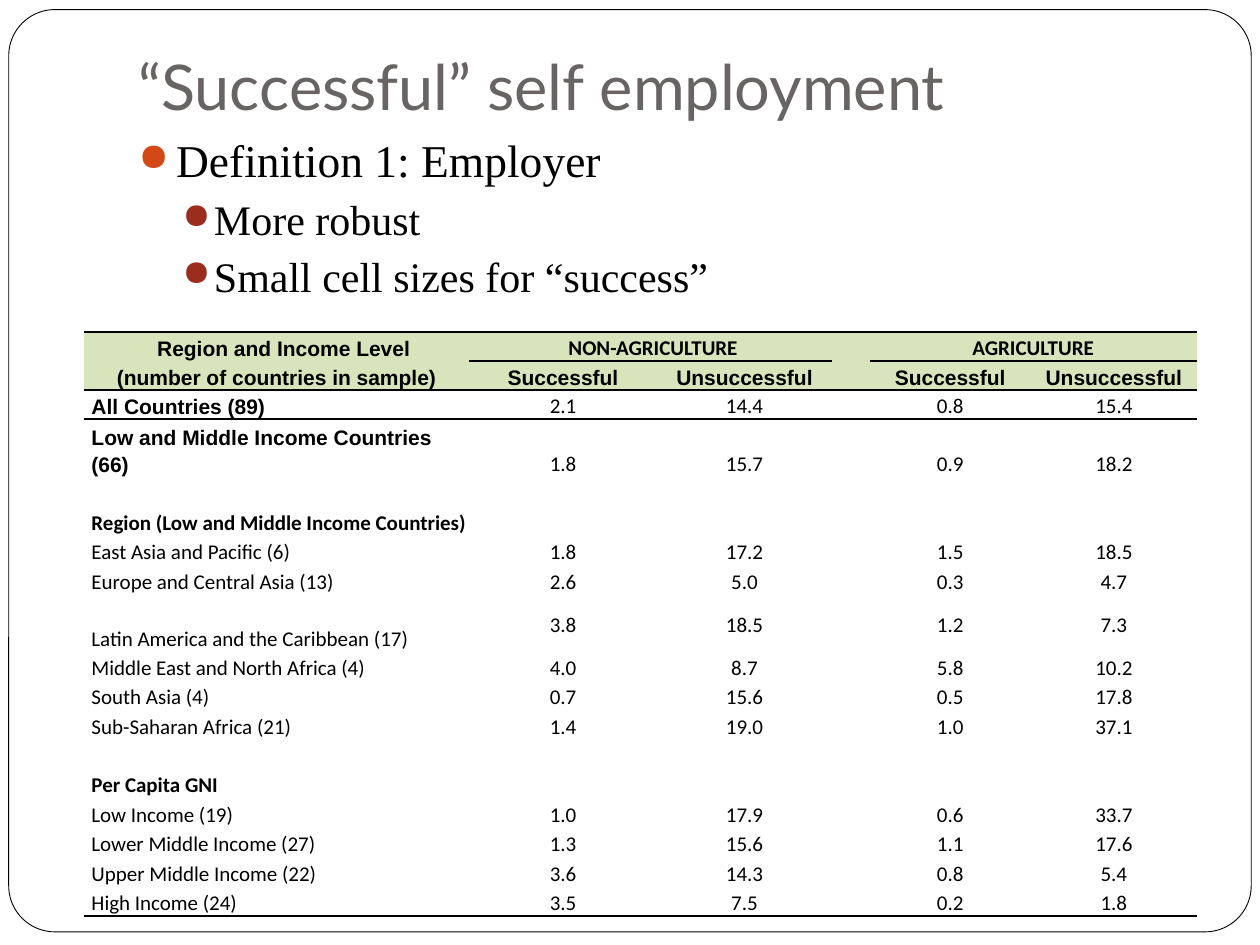
from lxml.etree import SubElement
from pptx import Presentation
from pptx.dml.color import RGBColor
from pptx.enum.shapes import MSO_SHAPE
from pptx.enum.text import MSO_ANCHOR, PP_ALIGN
from pptx.oxml import parse_xml
from pptx.oxml.ns import nsdecls, qn
from pptx.util import Pt

COLORS = {
    "black": "000000",
    "white": "FFFFFF",
    "title": "696464",
    "header": "D7E4BC",
    "orange": "D34817",
    "red": "9B2D1F",
}


def add_run(p, text, font, size, color="black", bold=False):
    r = p.add_run()
    r.text = text
    r.font.name = font
    r.font.size = Pt(size)
    r.font.bold = bold
    r.font.color.rgb = RGBColor.from_string(COLORS[color])


prs = Presentation()
prs.slide_width, prs.slide_height = Pt(720), Pt(540)
s = prs.slides.add_slide(prs.slide_layouts[6])

sp = s.shapes.add_shape(MSO_SHAPE.ROUNDED_RECTANGLE, Pt(5), Pt(5.5), Pt(710), Pt(527))
sp.adjustments[0] = 0.05
sp.shadow.inherit = False
sp.fill.solid()
sp.fill.fore_color.rgb = RGBColor.from_string(COLORS["white"])
sp.line.color.rgb = RGBColor.from_string(COLORS["black"])
sp.line.width = Pt(0.5)

tf = s.shapes.add_textbox(Pt(72), Pt(21.6), Pt(612), Pt(56)).text_frame
tf.word_wrap = True
tf.vertical_anchor = MSO_ANCHOR.BOTTOM
tf.margin_bottom = Pt(7.2)
add_run(tf.paragraphs[0], "“Successful” self employment", "Lato", 36, "title")

bullets = [
    ("Definition 1: Employer", 0, 26, 5.8, 21.6, 21.6, "orange"),
    ("More robust", 1, 24, 3.7, 43.2, 18, "red"),
    ("Small cell sizes for “success”", 1, 24, 3.7, 43.2, 18, "red"),
]
tf = s.shapes.add_textbox(Pt(72), Pt(72), Pt(612), Pt(360)).text_frame
tf.word_wrap = True
for i, (text, level, size, before, left, hang, color) in enumerate(bullets):
    p = tf.add_paragraph() if i else tf.paragraphs[0]
    p.level = level
    p.space_before = Pt(before)
    add_run(p, text, "Times New Roman", size)
    pPr = p._p.get_or_add_pPr()
    pPr.set("marL", str(Pt(left)))
    pPr.set("indent", str(-Pt(hang)))
    clr = SubElement(pPr, qn("a:buClr"))
    SubElement(clr, qn("a:srgbClr"), val=COLORS[color])
    SubElement(pPr, qn("a:buSzPct"), val="85000")
    SubElement(pPr, qn("a:buChar"), char="●")

rows = [
    ["Region and Income Level", " NON-AGRICULTURE", "", "", "AGRICULTURE", ""],
    ["(number of countries in sample)", "Successful", "Unsuccessful", "", "Successful", "Unsuccessful"],
    ["All Countries (89)", "2.1", "14.4", "", "0.8", "15.4"],
    ["Low and Middle Income Countries (66)", "1.8", "15.7", "", "0.9", "18.2"],
    [""] * 6,
    ["Region (Low and Middle Income Countries)"] + [""] * 5,
    ["East Asia and Pacific (6)", "1.8", "17.2", "", "1.5", "18.5"],
    ["Europe and Central Asia (13)", "2.6", "5.0", "", "0.3", "4.7"],
    ["Latin America and the Caribbean (17)", "3.8", "18.5", "", "1.2", "7.3"],
    ["Middle East and North Africa (4)", "4.0", "8.7", "", "5.8", "10.2"],
    ["South Asia (4)", "0.7", "15.6", "", "0.5", "17.8"],
    ["Sub-Saharan Africa (21)", "1.4", "19.0", "", "1.0", "37.1"],
    [""] * 6,
    ["Per Capita GNI"] + [""] * 5,
    ["Low Income (19)", "1.0", "17.9", "", "0.6", "33.7"],
    ["Lower Middle Income (27)", "1.3", "15.6", "", "1.1", "17.6"],
    ["Upper Middle Income (22)", "3.6", "14.3", "", "0.8", "5.4"],
    ["High Income (24)", "3.5", "7.5", "", "0.2", "1.8"],
]
widths = [220.2, 107.2, 100.2, 21.4, 92.2, 94.8]
special_heights = {0: 14.4, 1: 14.4, 3: 31.7, 8: 32.6}
section_rows = (5, 13)
middle_rows = (0, 8, 9)
all_cols, value_cols = range(6), (1, 2, 4, 5)
rules = {
    (0, "T"): all_cols,
    (0, "B"): value_cols,
    (1, "T"): value_cols,
    (1, "B"): all_cols,
    (2, "T"): all_cols,
    (len(rows) - 1, "B"): all_cols,
}

frame = s.shapes.add_table(len(rows), 6, Pt(48), Pt(189.6), Pt(636), Pt(332))
table = frame.table
table.first_row = table.horz_banding = False
table._tbl.tblPr.find(qn("a:tableStyleId")).text = "{2D5ABB26-0587-4C30-8999-92F81FD0307C}"
for col, width in zip(table.columns, widths):
    col.width = Pt(width)

for i, row in enumerate(rows):
    table.rows[i].height = Pt(special_heights.get(i, 16.8))
    for j, text in enumerate(row):
        cell = table.cell(i, j)
        cell.margin_left = cell.margin_right = Pt(4.3)
        cell.margin_top = cell.margin_bottom = 0
        middle = i in middle_rows and j > 0
        cell.vertical_anchor = MSO_ANCHOR.MIDDLE if middle else MSO_ANCHOR.BOTTOM
        if i < 2:
            cell.fill.solid()
            cell.fill.fore_color.rgb = RGBColor.from_string(COLORS["header"])
        else:
            cell.fill.background()
        p = cell.text_frame.paragraphs[0]
        p.line_spacing = 1.15
        p.alignment = PP_ALIGN.CENTER if i < 2 or j else PP_ALIGN.LEFT
        if text:
            arial = i == 1 or (i < 4 and j == 0)
            bold = i < 2 or arial or i in section_rows
            add_run(p, text, "Arial" if arial else "Calibri", 12, bold=bold)
        else:
            SubElement(p._p, qn("a:endParaRPr"), sz="1200")
        tcPr = cell._tc.get_or_add_tcPr()
        for side in "BT":
            if j in rules.get((i, side), ()):
                tcPr.insert(0, parse_xml(
                    f'<a:ln{side} {nsdecls("a")} w="{Pt(1)}"><a:solidFill>'
                    f'<a:srgbClr val="{COLORS["black"]}"/></a:solidFill></a:ln{side}>'))

table.cell(0, 0).margin_left = Pt(12.4)
for i, first in ((0, 1), (0, 4), (5, 0)):
    table.cell(i, first).merge(table.cell(i, first + 1))

prs.save("out.pptx")
